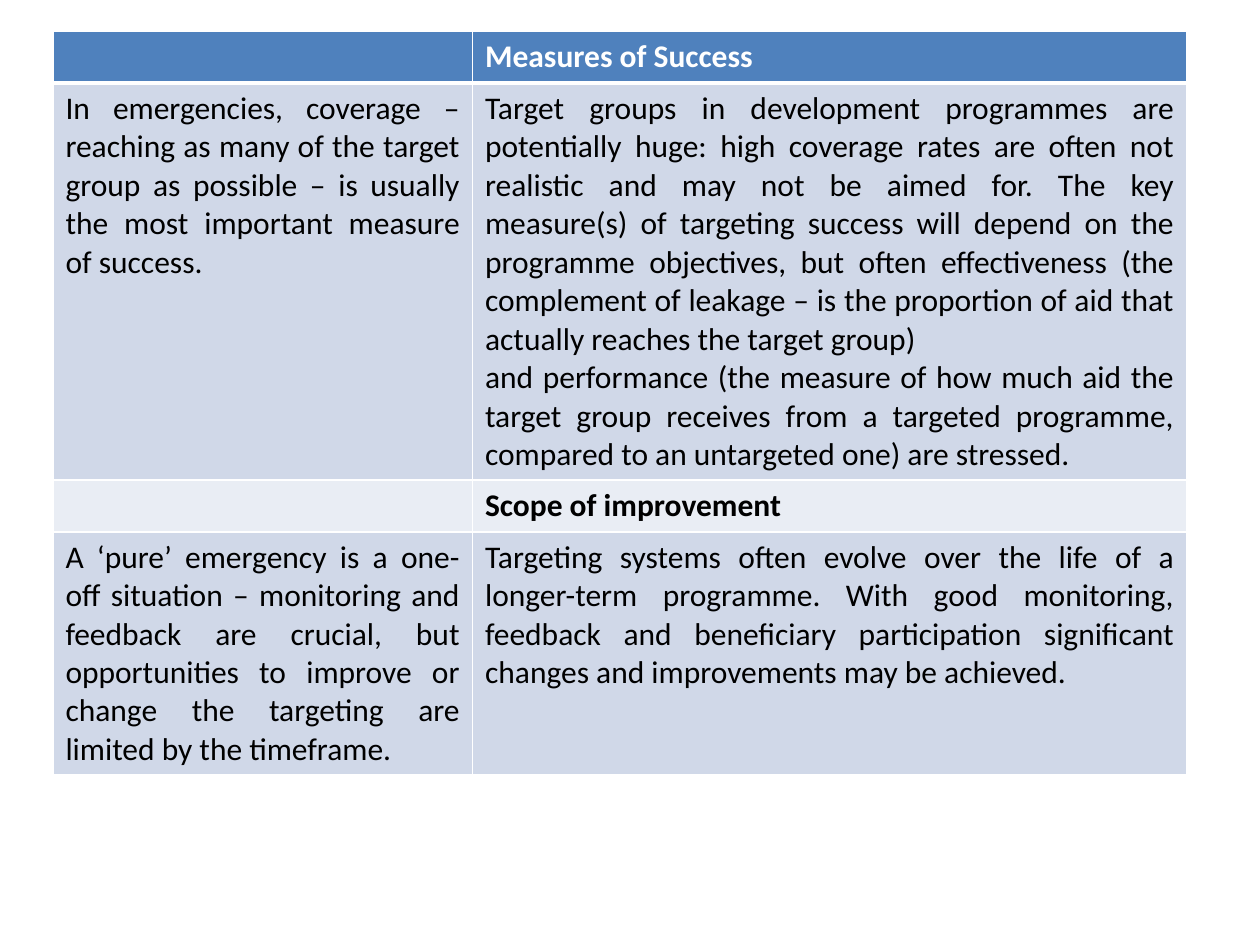
"""Build a slide with a table on measuring and improving targeting."""
from lxml import etree
from pptx import Presentation
from pptx import util as u
from pptx.dml.color import RGBColor
from pptx.enum import text
from pptx.oxml.ns import qn

ROWS = [
    ([], ["Measures of Success"]),
    (["In emergencies, coverage – reaching as many of the target group as "
      "possible – is usually the most important measure of success."],
     ["Target groups in development programmes are potentially huge: high "
      "coverage rates are often not realistic and may not be aimed for. The "
      "key measure(s) of targeting success will depend on the programme "
      "objectives, but often effectiveness (the complement of leakage – is "
      "the proportion of aid that actually reaches the target group)",
      "and performance (the measure of how much aid the target group "
      "receives from a targeted programme, compared to an untargeted one) "
      "are stressed."]),
    ([], ["Scope of improvement"]),
    (["A ‘pure’ emergency is a one-off situation – monitoring and feedback "
      "are crucial, but opportunities to improve or change the targeting "
      "are limited by the timeframe."],
     ["Targeting systems often evolve over the life of a longer-term "
      "programme. With good monitoring, feedback and beneficiary "
      "participation significant changes and improvements may be achieved."]),
]
THEME = {"font": "Calibri", "size": 18, "head": "4F81BD", "odd": "D0D8E8",
         "even": "E9EDF4", "ink": "000000", "white": "FFFFFF",
         "thin": 1, "thick": 3}
LEFT, TOP, HIGH = 0.42, 0.25, 0.41
WIDTHS = [3.33, 5.67]


def write(frame, paras, color, bold=False, align=None):
    """Fill a text frame with formatted paragraphs."""
    for i, words in enumerate(paras):
        para = frame.add_paragraph() if i else frame.paragraphs[0]
        para.alignment = align
        run = para.add_run()
        run.text = words
        font = run.font
        font.name, font.size, font.bold = THEME["font"], u.Pt(THEME["size"]), bold
        font.color.rgb = RGBColor.from_string(color)


def edge(cell, **sides):
    """Draw white cell borders of the given point widths."""
    props = cell._tc.get_or_add_tcPr()
    for side, width in sides.items():
        line = etree.SubElement(props, qn("a:ln" + side), w=str(u.Pt(width)))
        fill = etree.SubElement(line, qn("a:solidFill"))
        etree.SubElement(fill, qn("a:srgbClr"), val=THEME["white"])


def main():
    """Lay out the table and save the deck."""
    deck = Presentation()
    deck.slide_width, deck.slide_height = u.Inches(10), u.Inches(7.5)
    slide = deck.slides.add_slide(deck.slide_layouts[6])
    table = slide.shapes.add_table(
        len(ROWS), len(WIDTHS), u.Inches(LEFT), u.Inches(TOP),
        u.Inches(sum(WIDTHS)), u.Inches(HIGH * len(ROWS))).table
    for col, width in zip(table.columns, WIDTHS):
        col.width = u.Inches(width)
    thin, thick = THEME["thin"], THEME["thick"]
    for r, row in enumerate(ROWS):
        table.rows[r].height = u.Inches(HIGH)
        head = r == 0
        tone = "head" if head else "odd" if r % 2 else "even"
        for c, paras in enumerate(row):
            cell = table.cell(r, c)
            edge(cell, L=thin, R=thin, T=thick if r == 1 else thin,
                 B=thick if head else thin)
            cell.fill.solid()
            cell.fill.fore_color.rgb = RGBColor.from_string(THEME[tone])
            write(cell.text_frame, paras,
                  color=THEME["white" if head else "ink"], bold=not row[0],
                  align=None if head else text.PP_ALIGN.JUSTIFY)
    deck.save("out.pptx")


if __name__ == "__main__":
    main()
